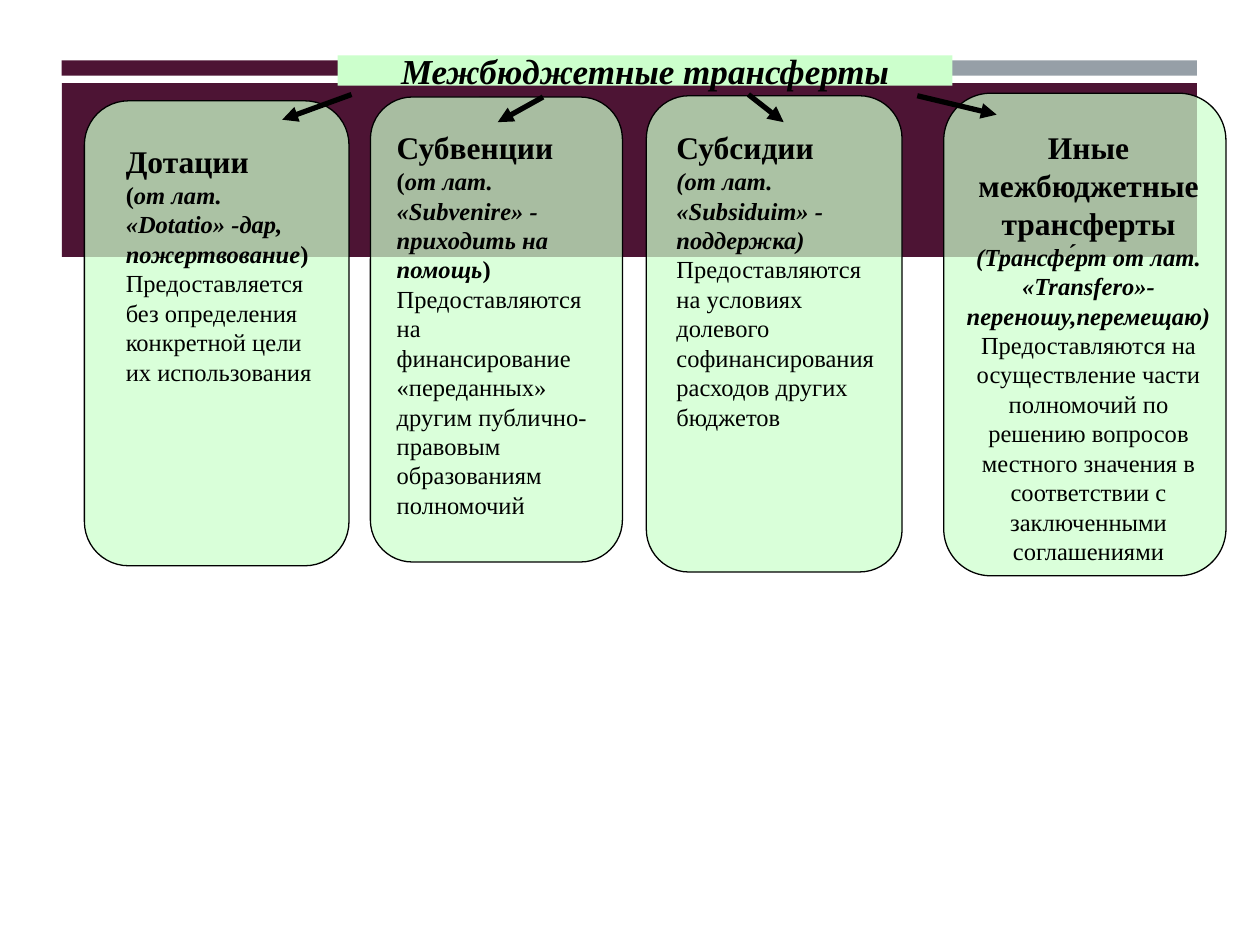
from dataclasses import dataclass
from typing import NamedTuple

from lxml import etree
from pptx import Presentation
from pptx.dml.color import RGBColor
from pptx.enum import shapes, text
from pptx.oxml import ns
from pptx.util import Emu, Pt

PX = 9144  # EMU per px, 100 px to the inch

PLUM = RGBColor(0x4D, 0x14, 0x34)
GREY = RGBColor(0x96, 0x9F, 0xA7)
MINT = RGBColor(0xCC, 0xFF, 0xCC)
BLACK = RGBColor(0x00, 0x00, 0x00)
SERIF = "Times New Roman"
LEFT = text.PP_ALIGN.LEFT
CENTER = text.PP_ALIGN.CENTER


class Box(NamedTuple):
    left: int
    top: int
    width: int
    height: int


class Style(NamedTuple):
    size: int
    bold: bool = False
    italic: bool = False
    font: str = SERIF


class Arrow(NamedTuple):
    x1: int
    y1: int
    x2: int
    y2: int


TITLE = Style(20, bold=True, italic=True)
HEADING = Style(18, bold=True)
BOLD = Style(14, bold=True)
ORIGIN = Style(14, bold=True, italic=True)
BODY = Style(14)
GAP = Style(9, font="Arial")


@dataclass
class Card:
    frame: Box
    opacity: int
    text_box: Box
    paragraphs: list[list[tuple[str, Style]]]
    align: text.PP_ALIGN = LEFT


BANDS = [
    (Box(49, 48, 297, 12), PLUM),
    (Box(654, 48, 296, 12), GREY),
    (Box(49, 66, 901, 138), PLUM),
]

CARDS = [
    Card(Box(67, 80, 210, 369), 74, Box(90, 108, 173, 205), [
        [("Дотации", HEADING)],
        [("(", BOLD), ("от лат. «Dotatio» -дар, пожертвование", ORIGIN), (")", BOLD)],
        [("Предоставляется без определения конкретной цели их использования", BODY)],
    ]),
    Card(Box(294, 77, 200, 369), 72, Box(305, 97, 181, 323), [
        [("Субвенции", HEADING)],
        [("(", BOLD), ("от лат. «Subvenire» - приходить на помощь", ORIGIN), (")", BOLD)],
        [("Предоставляются на финансирование «переданных» другим "
          "публично-правовым образованиям полномочий", BODY)],
    ]),
    Card(Box(513, 76, 203, 378), 74, Box(527, 97, 189, 252), [
        [("Субсидии", HEADING)],
        [("(от лат. «Subsiduim» - поддержка)", ORIGIN)],
        [("Предоставляются на условиях долевого софинансирования "
          "расходов других бюджетов", BODY)],
    ]),
    Card(Box(749, 74, 224, 383), 72, Box(756, 97, 216, 360), [
        [("Иные межбюджетные трансферты", HEADING),
         (" ", GAP),
         ("(Трансфе́рт от лат. «Transfero»-переношу,перемещаю) ", ORIGIN),
         ("Предоставляются на осуществление части полномочий по решению вопросов "
          "местного значения в соответствии с заключенными соглашениями", BODY)],
    ], CENTER),
]

ARROWS = [
    Arrow(279, 75, 224, 95),
    Arrow(431, 77, 395, 97),
    Arrow(594, 75, 622, 97),
    Arrow(728, 76, 791, 91),
]


def emu(*lengths: int) -> list[Emu]:
    return [Emu(length * PX) for length in lengths]


def add_block(slide, kind: shapes.MSO_SHAPE, box: Box, color: RGBColor):
    shape = slide.shapes.add_shape(kind, *emu(*box))
    shape.shadow.inherit = False
    shape.fill.solid()
    shape.fill.fore_color.rgb = color
    shape.line.fill.background()
    return shape


def add_run(paragraph, words: str, style: Style) -> None:
    run = paragraph.add_run()
    run.text = words
    run.font.name = style.font
    run.font.size = Pt(style.size)
    run.font.bold = style.bold
    run.font.italic = style.italic
    run.font.color.rgb = BLACK


def add_title(slide) -> None:
    shape = add_block(slide, shapes.MSO_SHAPE.RECTANGLE, Box(268, 44, 488, 24), MINT)
    frame = shape.text_frame
    frame.word_wrap = False
    frame.vertical_anchor = text.MSO_ANCHOR.MIDDLE
    frame.paragraphs[0].alignment = CENTER
    add_run(frame.paragraphs[0], "Межбюджетные трансферты", TITLE)


def add_card_frame(slide, card: Card) -> None:
    kind = shapes.MSO_SHAPE.FLOWCHART_ALTERNATE_PROCESS
    shape = add_block(slide, kind, card.frame, MINT)
    shape.line.color.rgb = BLACK
    shape.line.width = Pt(0.75)
    color = shape.fill._xPr.find(".//" + ns.qn("a:srgbClr"))
    etree.SubElement(color, ns.qn("a:alpha"), val=str(card.opacity * 1000))


def add_card_text(slide, card: Card) -> None:
    frame = slide.shapes.add_textbox(*emu(*card.text_box)).text_frame
    frame.word_wrap = True
    frame.auto_size = text.MSO_AUTO_SIZE.SHAPE_TO_FIT_TEXT
    for index, runs in enumerate(card.paragraphs):
        paragraph = frame.add_paragraph() if index else frame.paragraphs[0]
        paragraph.alignment = card.align
        for words, style in runs:
            add_run(paragraph, words, style)


def add_arrow(slide, arrow: Arrow) -> None:
    connector = slide.shapes.add_connector(shapes.MSO_CONNECTOR.STRAIGHT, *emu(*arrow))
    connector.line.color.rgb = BLACK
    connector.line.width = Pt(3)
    etree.SubElement(connector.line._get_or_add_ln(), ns.qn("a:tailEnd"), type="triangle")
    etree.SubElement(connector._element.spPr, ns.qn("a:effectLst"))


def main() -> None:
    presentation = Presentation()
    presentation.slide_width, presentation.slide_height = emu(1000, 750)
    slide = presentation.slides.add_slide(presentation.slide_layouts[6])

    # Header bands and title
    for box, color in BANDS:
        add_block(slide, shapes.MSO_SHAPE.RECTANGLE, box, color)
    add_title(slide)

    # Cards, the arrows that lead to them, and their wording
    for card in CARDS:
        add_card_frame(slide, card)
    for arrow in ARROWS:
        add_arrow(slide, arrow)
    for card in CARDS:
        add_card_text(slide, card)

    presentation.save("out.pptx")


if __name__ == "__main__":
    main()
